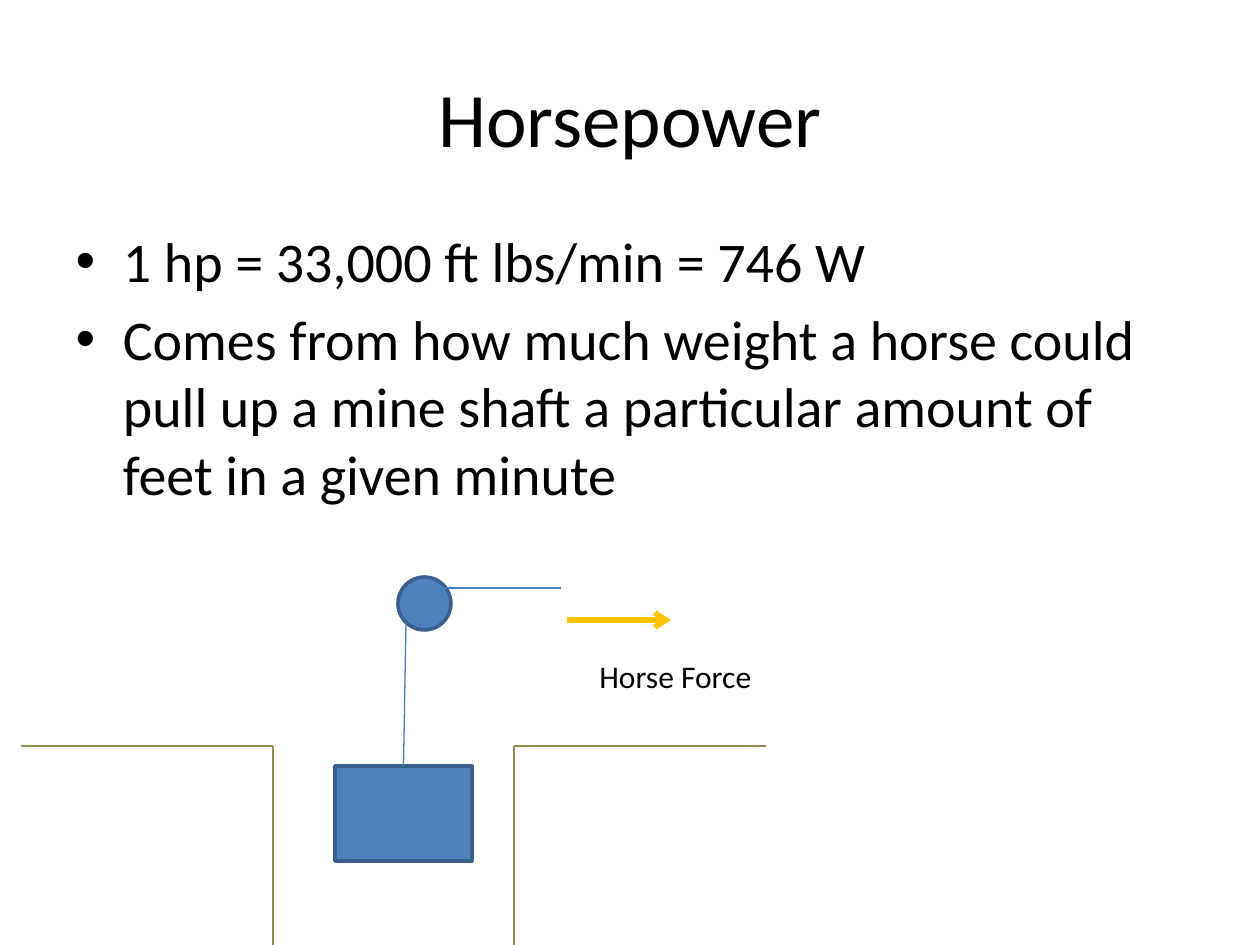
import pptx
import pptx.util
import pptx.dml.color
import pptx.enum.shapes
import pptx.enum.text
import pptx.oxml.ns
import lxml.etree

BLACK = pptx.dml.color.RGBColor(0x00, 0x00, 0x00)
BLUE = pptx.dml.color.RGBColor(0x4F, 0x81, 0xBD)
DARK_BLUE = pptx.dml.color.RGBColor(0x3A, 0x5F, 0x8C)
ROPE_BLUE = pptx.dml.color.RGBColor(0x4B, 0x7E, 0xBC)
GOLD = pptx.dml.color.RGBColor(0xFF, 0xC0, 0x00)
EARTH = pptx.dml.color.RGBColor(0x94, 0x8A, 0x54)
qn = pptx.oxml.ns.qn
EMU_PER_PX = 914400 / 126


def px(*lengths):
    return [pptx.util.Emu(round(n * EMU_PER_PX)) for n in lengths]


def add_line(x1, y1, x2, y2, color, width=0.75):
    line = slide.shapes.add_connector(
        pptx.enum.shapes.MSO_CONNECTOR.STRAIGHT, *px(x1, y1, x2, y2))
    line.line.color.rgb = color
    line.line.width = pptx.util.Pt(width)
    lxml.etree.SubElement(line._element.spPr, qn("a:effectLst"))
    return line


prs = pptx.Presentation()
prs.slide_width, prs.slide_height = px(1260, 945)
slide = prs.slides.add_slide(prs.slide_layouts[1])

# Title and bullets
title, bullets = slide.shapes.title, slide.placeholders[1]
title.left, title.top, title.width, title.height = px(63, 38, 1134, 157)
bullets.left, bullets.top, bullets.width, bullets.height = px(63, 220, 1134, 624)
title.text_frame.text = "Horsepower"
bullets.text_frame.text = (
    "1 hp = 33,000 ft lbs/min = 746 W\n"
    "Comes from how much weight a horse could pull up a mine shaft "
    "a particular amount of feet in a given minute")

# Load and pulley
load = slide.shapes.add_shape(
    pptx.enum.shapes.MSO_SHAPE.RECTANGLE, *px(335, 766, 137, 95))
pulley = slide.shapes.add_shape(
    pptx.enum.shapes.MSO_SHAPE.OVAL, *px(398, 577, 53, 53))
for body in (load, pulley):
    body.shadow.inherit = False
    body.fill.solid()
    body.fill.fore_color.rgb = BLUE
    body.line.color.rgb = DARK_BLUE
    body.line.width = pptx.util.Pt(2)

# Rope from the load over the pulley
hoist_rope = add_line(403, 766, 406, 623, ROPE_BLUE)
hoist_rope.begin_connect(load, 0)
add_line(441, 588, 561, 588, ROPE_BLUE)

# Pulling force
force = add_line(567, 620, 671, 620, GOLD, 3)
lxml.etree.SubElement(force.line._get_or_add_ln(), qn("a:tailEnd"), type="arrow")
force_label = slide.shapes.add_textbox(*px(587, 651, 179, 51))
force_label.text_frame.word_wrap = False
force_label.text_frame.auto_size = pptx.enum.text.MSO_AUTO_SIZE.SHAPE_TO_FIT_TEXT
force_label.text_frame.text = "Horse Force"

# Fonts
for words, size in ((title, 44), (bullets, 32), (force_label, 18)):
    for paragraph in words.text_frame.paragraphs:
        for run in paragraph.runs:
            run.font.name = "Calibri"
            run.font.size = pptx.util.Pt(size)
            run.font.color.rgb = BLACK

# Ground and shaft wall on either side
for ground_left, wall in ((21, 273), (514, 514)):
    add_line(ground_left, 746, ground_left + 252, 746, EARTH)
    add_line(wall, 945, wall, 746, EARTH)

prs.save("out.pptx")
